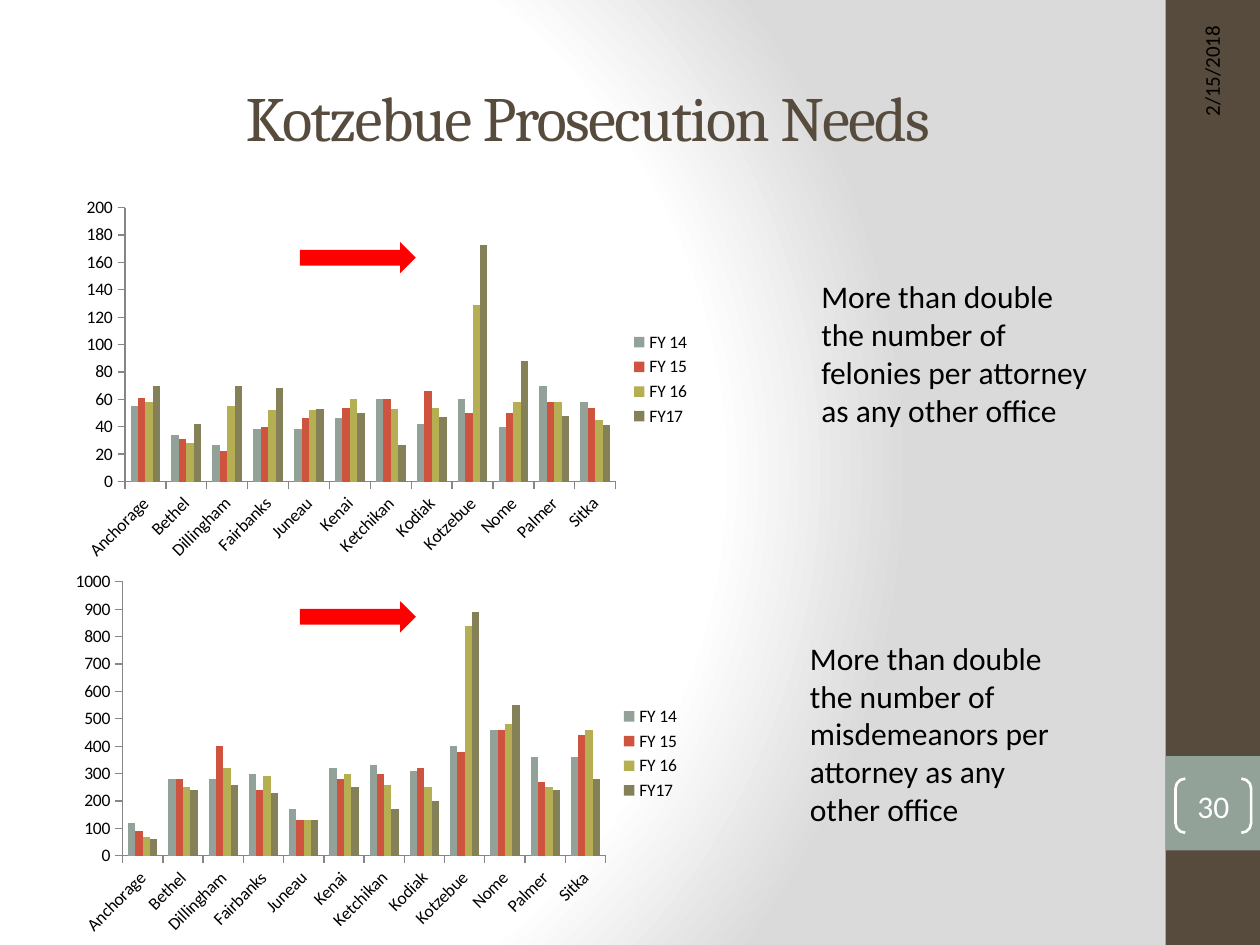
from dataclasses import dataclass

from lxml import etree
from pptx import Presentation
from pptx.chart.data import CategoryChartData
from pptx.dml.color import RGBColor
from pptx.enum.chart import XL_CHART_TYPE, XL_LEGEND_POSITION, XL_TICK_MARK
from pptx.enum.shapes import MSO_SHAPE
from pptx.enum.text import MSO_ANCHOR, MSO_AUTO_SIZE, PP_ALIGN
from pptx.oxml import parse_xml
from pptx.oxml.ns import nsdecls, qn
from pptx.util import Inches, Pt

COLUMNS = XL_CHART_TYPE.COLUMN_CLUSTERED
LEGEND_RIGHT = XL_LEGEND_POSITION.RIGHT
TICK_OUT, TICK_NONE = XL_TICK_MARK.OUTSIDE, XL_TICK_MARK.NONE
RECT, ARROW, BRACKETS = MSO_SHAPE.RECTANGLE, MSO_SHAPE.RIGHT_ARROW, MSO_SHAPE.DOUBLE_BRACKET
LEFT, CENTER, RIGHT = PP_ALIGN.LEFT, PP_ALIGN.CENTER, PP_ALIGN.RIGHT
TOP, MIDDLE = MSO_ANCHOR.TOP, MSO_ANCHOR.MIDDLE
NO_FIT, GROW = MSO_AUTO_SIZE.NONE, MSO_AUTO_SIZE.SHAPE_TO_FIT_TEXT


@dataclass(frozen=True)
class Theme:
    heading: str = "Cambria"
    body: str = "Calibri"
    brown: str = "564B3C"
    sage: str = "93A299"
    white: str = "FFFFFF"
    gray: str = "DADADA"
    black: str = "000000"
    axis: str = "868686"
    red: str = "FF0000"
    series: tuple = ("93A299", "CF543F", "B5AE53", "848058")
    title_size: int = 36
    text_size: int = 18
    date_size: int = 12
    chart_size: int = 10


THEME = Theme()

OFFICES = ["Anchorage", "Bethel", "Dillingham", "Fairbanks", "Juneau", "Kenai",
           "Ketchikan", "Kodiak", "Kotzebue", "Nome", "Palmer", "Sitka"]
YEARS = ["FY 14", "FY 15", "FY 16", "FY17"]
FELONIES = [
    [55, 34, 27, 38, 38, 46, 60, 42, 60, 40, 70, 58],
    [61, 31, 22, 40, 46, 54, 60, 66, 50, 50, 58, 54],
    [58, 28, 55, 52, 52, 60, 53, 54, 129, 58, 58, 45],
    [70, 42, 70, 68, 53, 50, 27, 47, 173, 88, 48, 41],
]
MISDEMEANORS = [
    [120, 280, 280, 300, 170, 320, 330, 310, 400, 460, 360, 360],
    [90, 280, 400, 240, 130, 280, 300, 320, 380, 460, 270, 440],
    [70, 250, 320, 290, 130, 300, 260, 250, 840, 480, 250, 460],
    [60, 240, 260, 230, 130, 250, 170, 200, 890, 550, 240, 280],
]


def rgb(color):
    return RGBColor.from_string(color)


def inches(box):
    return [Inches(v) for v in box]


def write(sp, text, size, color, font=THEME.body, align=LEFT, anchor=TOP, fit=NO_FIT):
    tf = sp.text_frame
    tf.text = text
    tf.word_wrap = True
    tf.auto_size = fit
    tf.vertical_anchor = anchor
    p = tf.paragraphs[0]
    p.alignment = align
    r = p.runs[0]
    r.font.size = Pt(size)
    r.font.name = font
    r.font.color.rgb = rgb(color)
    return r


def add_filled(slide, kind, box, color):
    sp = slide.shapes.add_shape(kind, *inches(box))
    sp.shadow.inherit = False
    sp.fill.solid()
    sp.fill.fore_color.rgb = rgb(color)
    sp.line.fill.background()
    return sp


def set_background(slide):
    stops = "".join(
        f'<a:gs pos="{pos}"><a:srgbClr val="{color}"/></a:gs>'
        for pos, color in ((0, THEME.white), (75000, THEME.white), (100000, THEME.gray)))
    bg = parse_xml(
        f'<p:bg {nsdecls("p", "a")}><p:bgPr><a:gradFill rotWithShape="1">'
        f'<a:gsLst>{stops}</a:gsLst><a:path path="circle">'
        '<a:fillToRect l="20000" t="50000" r="100000" b="50000"/></a:path>'
        '</a:gradFill><a:effectLst/></p:bgPr></p:bg>')
    slide.element.cSld.insert(0, bg)


def add_title(slide, box, text):
    sp = slide.shapes.title
    sp.left, sp.top, sp.width, sp.height = inches(box)
    r = write(sp, text, THEME.title_size, THEME.brown, THEME.heading, CENTER, MIDDLE)
    r.font._element.set("spc", "-100")


def add_sidebar(slide, box, date, number):
    x, y, w, h = box
    add_filled(slide, RECT, box, THEME.brown)
    add_filled(slide, RECT, (x, y + 6, w, w), THEME.sage)

    sp = slide.shapes.add_shape(BRACKETS, *inches((x + 0.08, y + 6.18, 0.6, 0.43)))
    sp.shadow.inherit = False
    sp.adjustments[0] = 0.18
    sp.fill.background()
    sp.line.color.rgb = rgb(THEME.white)
    sp.line.width = Pt(1.5)
    tf = sp.text_frame
    tf.margin_left = tf.margin_top = tf.margin_right = tf.margin_bottom = 0
    write(sp, number, THEME.text_size, THEME.white, align=CENTER, anchor=MIDDLE)

    sp = slide.shapes.add_textbox(*inches((x - 0.97, y + 1.24, 2.67, 0.4)))
    sp.rotation = 270
    write(sp, date, THEME.date_size, THEME.black, align=RIGHT, anchor=MIDDLE)


def add_office_chart(slide, box, rows, top, step):
    data = CategoryChartData()
    data.categories = OFFICES
    for year, values in zip(YEARS, rows):
        data.add_series(year, values)
    chart = slide.shapes.add_chart(COLUMNS, *inches(box), data).chart
    chart.has_title = False
    chart.font.size = Pt(THEME.chart_size)
    chart.font.name = THEME.body
    chart.font.color.rgb = rgb(THEME.black)
    chart.has_legend = True
    chart.legend.position = LEGEND_RIGHT
    chart.legend.include_in_layout = False

    for axis in (chart.category_axis, chart.value_axis):
        axis.has_major_gridlines = False
        axis.major_tick_mark = TICK_OUT
        axis.minor_tick_mark = TICK_NONE
        axis.format.line.color.rgb = rgb(THEME.axis)
    chart.value_axis.minimum_scale = 0
    chart.value_axis.maximum_scale = top
    chart.value_axis.major_unit = step

    plot = chart.plots[0]
    plot.vary_by_categories = False
    plot.gap_width = 150
    for series, color in zip(plot.series, THEME.series):
        series.format.fill.solid()
        series.format.fill.fore_color.rgb = rgb(color)


def add_caption(slide, box, text):
    sp = slide.shapes.add_textbox(*inches(box))
    write(sp, text, THEME.text_size, THEME.black, fit=GROW)


def main():
    prs = Presentation()
    prs.slide_width, prs.slide_height = Inches(10), Inches(7.5)
    slide = prs.slides.add_slide(prs.slide_layouts[5])
    set_background(slide)
    add_sidebar(slide, (9.25, 0, 0.75, 7.5), "2/15/2018", "30")
    add_title(slide, (0.5, 0.3, 8.33, 1.25), "Kotzebue Prosecution Needs")
    add_office_chart(slide, (0.58, 1.51, 5, 3), FELONIES, 200, 20)
    add_office_chart(slide, (0.5, 4.48, 5, 3), MISDEMEANORS, 1000, 100)
    add_caption(slide, (6.42, 2.15, 2.33, 1.31),
                "More than double the number of felonies per attorney as any other office")
    add_caption(slide, (6.33, 5.02, 2.33, 1.62),
                "More than double the number of misdemeanors per attorney as any other office")
    for y in (1.92, 4.77):
        add_filled(slide, ARROW, (2.38, y, 0.92, 0.25), THEME.red)
    prs.save("out.pptx")


if __name__ == "__main__":
    main()
